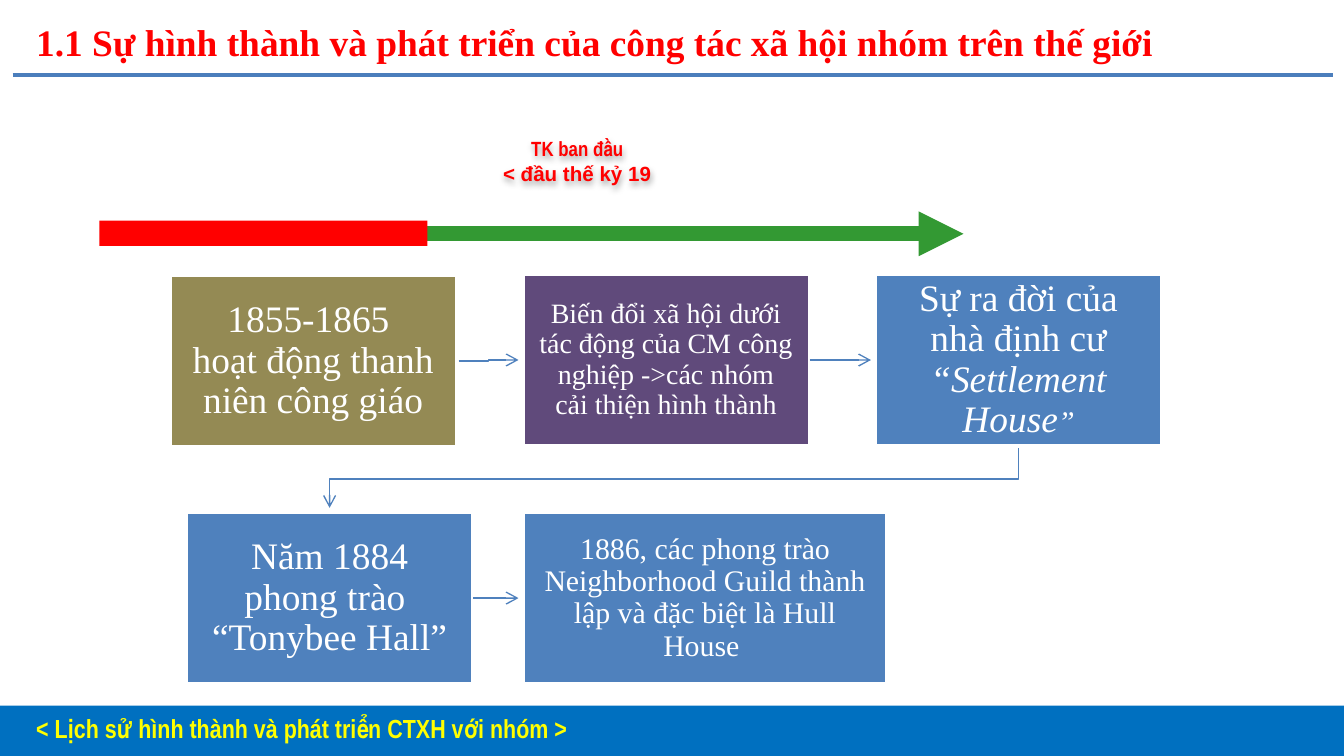
import pptx
import pptx.dml.color
import pptx.enum.shapes
import pptx.enum.text
import pptx.oxml
import pptx.oxml.ns
import pptx.util
from pptx.util import Cm

COLORS = {
    "red": "FF0000", "green": "339933", "yellow": "FFFF00", "white": "FFFFFF",
    "bar": "0070C0", "rule": "4B7EBC", "blue": "4F81BD",
    "olive": "948A54", "purple": "604A7B",
}
SERIF, NARROW, SANS = "Times New Roman", "Arial Narrow", "Arial"
RECT = pptx.enum.shapes.MSO_SHAPE.RECTANGLE
ALIGN = pptx.enum.text.PP_ALIGN
ANCHOR = pptx.enum.text.MSO_ANCHOR


def rgb(name):
    return pptx.dml.color.RGBColor.from_string(COLORS[name])


def add_xml(parent, tag, **attrs):
    el = pptx.oxml.parse_xml(f"<a:{tag} {pptx.oxml.ns.nsdecls('a')}/>")
    for key, value in attrs.items():
        el.set(key, value)
    parent.append(el)
    return el


def add_text(p, text, size, color="white", font=SERIF, bold=False, italic=False):
    """Add formatted text to a paragraph; a newline becomes a line break."""
    for i, line in enumerate(text.split("\n")):
        if i:
            p.add_line_break()
        r = p.add_run()
        r.text = line
        r.font.size = pptx.util.Pt(size)
        r.font.name = font
        r.font.bold = bold
        r.font.italic = italic
        r.font.color.rgb = rgb(color)


def add_box(s, x, y, w, h, fill=None, line=None, shape=RECT):
    sp = s.shapes.add_shape(shape, Cm(x), Cm(y), Cm(w), Cm(h))
    sp.shadow.inherit = False
    if fill:
        sp.fill.solid()
        sp.fill.fore_color.rgb = rgb(fill)
    else:
        sp.fill.background()
    if line:
        sp.line.color.rgb = rgb(line)
        sp.line.width = pptx.util.Pt(2)
    else:
        sp.line.fill.background()
    return sp


def style_line(sp, color, width, head=None):
    sp.line.color.rgb = rgb(color)
    sp.line.width = pptx.util.Pt(width)
    if head:
        add_xml(sp.line._get_or_add_ln(), "tailEnd", type=head)


def add_line(s, start, end, color, width, head=None):
    """Straight line between two (x, y) points in EMU."""
    c = s.shapes.add_connector(pptx.enum.shapes.MSO_CONNECTOR.STRAIGHT, *start, *end)
    style_line(c, color, width, head)
    add_xml(c._element.spPr, "effectLst")
    return c


def add_bent_arrow(s, points):
    builder = s.shapes.build_freeform(*points[0])
    builder.add_line_segments(points[1:], close=False)
    sp = builder.convert_to_shape()
    sp.shadow.inherit = False
    sp.fill.background()
    style_line(sp, "blue", 0.75, "arrow")


def place(sp, x, y, w, h):
    sp.left, sp.top, sp.width, sp.height = Cm(x), Cm(y), Cm(w), Cm(h)


def header(s, x, y, w, h):
    line_y = Cm(y + h - 0.01)
    add_line(s, (Cm(x), line_y), (Cm(x + w), line_y), "rule", 2)
    title = s.shapes.title
    place(title, x + 0.19, y, w - 0.4, h)
    tf = title.text_frame
    tf.vertical_anchor = ANCHOR.MIDDLE
    p = tf.paragraphs[0]
    p.alignment = ALIGN.LEFT
    add_text(p, "1.1 Sự hình thành và phát triển của công tác xã hội nhóm trên thế giới",
             20, "red", bold=True)


def footer(s, x, y, w, h):
    bar = add_box(s, x, y, w, h, "bar")
    body = s.placeholders[1]
    bar._element.addnext(body._element)
    place(body, x + 0.43, y, w - 0.84, 0.81)
    tf = body.text_frame
    tf.vertical_anchor = ANCHOR.TOP
    p = tf.paragraphs[0]
    p.alignment = ALIGN.JUSTIFY
    pPr = p._p.get_or_add_pPr()
    pPr.set("marL", "0")
    pPr.set("indent", "0")
    add_xml(pPr, "buNone")
    add_text(p, "< Lịch sử hình thành và phát triển CTXH với nhóm >",
             14, "yellow", NARROW, bold=True)


def timeline(s, x, y):
    """Red start bar and green arrow, with the period label above."""
    mid = Cm(y + 2.03)
    for start, end, head in ((5.16, 12.37, None), (12.14, 16.33, "triangle")):
        add_line(s, (Cm(x + start), mid), (Cm(x + end), mid), "green", 8, head)
    add_box(s, x, y + 1.78, 6.2, 0.48, "red")
    label = add_box(s, x + 3.85, y + 0.01, 10.36, 1.27,
                    shape=pptx.enum.shapes.MSO_SHAPE.ROUNDED_RECTANGLE)
    effects = label._element.spPr.find(pptx.oxml.ns.qn("a:effectLst"))
    shadow = add_xml(effects, "outerShdw", blurRad="40000", dist="23000", dir="5400000")
    add_xml(add_xml(shadow, "srgbClr", val="000000"), "alpha", val="35000")
    tf = label.text_frame
    tf.word_wrap = True
    tf.vertical_anchor = ANCHOR.MIDDLE
    lines = [("TK ban đầu", NARROW), ("< đầu thế kỷ 19", SANS)]
    for i, (text, font) in enumerate(lines):
        p = tf.add_paragraph() if i else tf.paragraphs[0]
        p.alignment = ALIGN.CENTER
        add_text(p, text, 11, "red", font, bold=True)


def step(s, x, y, w, fill, inset, runs):
    sp = add_box(s, x, y, w, 3.25, fill, "white")
    tf = sp.text_frame
    tf.word_wrap = True
    tf.vertical_anchor = ANCHOR.MIDDLE
    tf.margin_left = tf.margin_right = tf.margin_top = tf.margin_bottom = Cm(inset)
    p = tf.paragraphs[0]
    p.alignment = ALIGN.CENTER
    p.line_spacing = 0.9
    for text, fmt in runs:
        add_text(p, text, **fmt)
    return sp


def flow(s, x, y):
    """Five steps in two rows, linked by arrows."""
    row2, col2, col3, w, gap = y + 4.5, x + 6.67, x + 13.33, 5.42, Cm(0.08)
    big = {"size": 20}
    catholic = step(s, x, y + 0.02, w, "olive", 0.4,
                    [("1855-1865 \nhoạt động thanh niên công giáo", big)])
    change = step(s, col2, y, w, "purple", 0.3,
                  [("Biến đổi xã hội dưới tác động của CM công nghiệp ->các nhóm "
                    "cải thiện hình thành", {"size": 15})])
    house = step(s, col3, y, w, "blue", 0.4,
                 [("Sự ra đời của nhà định cư ", big),
                  ("“Settlement House", {"size": 20, "italic": True}),
                  ("”", {"size": 16, "italic": True})])
    hall = step(s, x + 0.31, row2, w, "blue", 0.4,
                [("Năm 1884 phong trào \n“Tonybee Hall” ", big)])
    guild = step(s, col2, row2, 6.89, "blue", 0.3,
                 [("1886, các phong trào Neighborhood Guild thành lập và đặc biệt "
                   "là Hull House ", {"size": 16})])

    for a, b in ((change, house), (hall, guild)):
        mid = a.top + a.height // 2
        c = add_line(s, (a.left + a.width, mid), (b.left - gap, mid), "blue", 0.75, "arrow")
        c.begin_connect(a, 3)

    right, end = catholic.left + catholic.width + gap // 2, change.left - gap
    start_y, end_y = (b.top + b.height // 2 for b in (catholic, change))
    bend = (right + end) // 2
    add_bent_arrow(s, [(right, start_y), (bend, start_y), (bend, end_y), (end, end_y)])

    house_x, hall_x = (b.left + b.width // 2 for b in (house, hall))
    bottom = house.top + house.height + gap // 2
    turn = (house.top + house.height + hall.top) // 2
    add_bent_arrow(s, [(house_x, bottom), (house_x, turn), (hall_x, turn),
                       (hall_x, hall.top - gap)])


def main():
    prs = pptx.Presentation()
    prs.slide_width, prs.slide_height = Cm(25.4), Cm(14.29)
    s = prs.slides.add_slide(prs.slide_layouts[1])
    header(s, 0.24, 0.15, 24.96, 1.28)
    footer(s, 0, 13.34, 25.4, 0.95)
    timeline(s, 1.88, 2.39)
    flow(s, 3.21, 5.18)
    prs.save("out.pptx")


if __name__ == "__main__":
    main()
